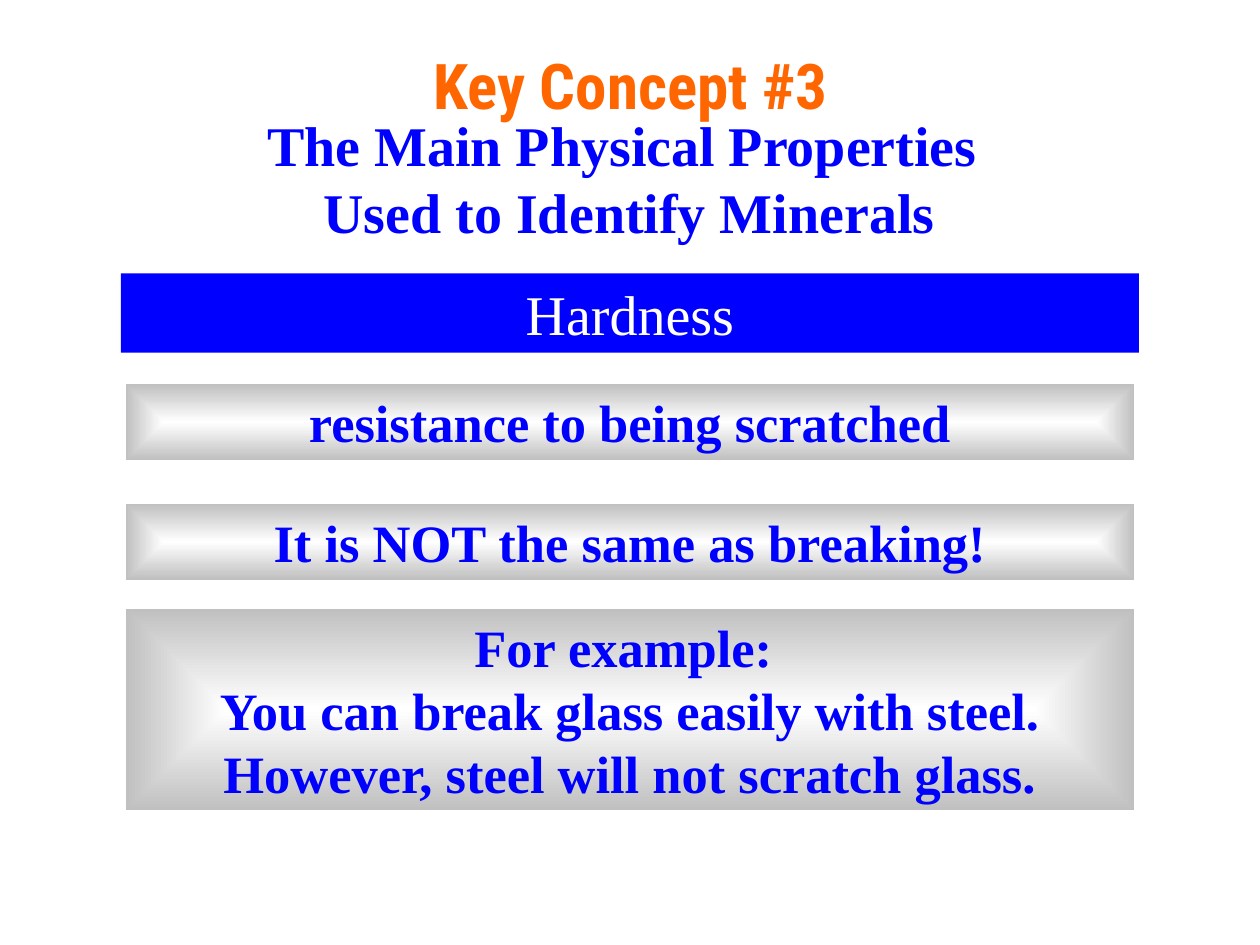
from lxml.etree import SubElement
from pptx import Presentation
from pptx.dml.color import RGBColor
from pptx.enum.shapes import MSO_SHAPE as Shape
from pptx.enum.text import MSO_ANCHOR as Anchor, PP_ALIGN as Align
from pptx.oxml.ns import qn
from pptx.util import Inches, Pt

COLORS = {
    "title": "FF6600",
    "blue": "0000FF",
    "white": "FFFFFF",
    "silver": "C0C0C0",
}
SERIF = "Times New Roman"
PANEL_LEFT, PANEL_WIDTH = 1, 8
PANELS = [
    (3.05, 0.6, ["resistance to being scratched"]),
    (4, 0.6, ["It is NOT the same as breaking!"]),
    (4.83, 1.6, [
        "For example: ",
        "You can break glass easily with steel.",
        "However, steel will not scratch glass.",
    ]),
]


def rgb(name):
    return RGBColor.from_string(COLORS[name])


def write_lines(shape, lines, size, color, bold=True, font=SERIF,
                anchor=Anchor.TOP, wrap=True):
    """Fill the shape with one centred paragraph per line."""
    frame = shape.text_frame
    frame.word_wrap = wrap
    frame.vertical_anchor = anchor
    frame.text = "\n".join(lines)
    for paragraph in frame.paragraphs:
        paragraph.alignment = Align.CENTER
        paragraph.font.name = font
        paragraph.font.size = Pt(size)
        paragraph.font.bold = bold
        paragraph.font.color.rgb = rgb(color)


def add_text(slide, left, top, width, height, lines, size, color, **style):
    box = slide.shapes.add_textbox(
        Inches(left), Inches(top), Inches(width), Inches(height))
    write_lines(box, lines, size, color, **style)


def add_rectangle(slide, left, top, width, height):
    shape = slide.shapes.add_shape(
        Shape.RECTANGLE,
        Inches(left), Inches(top), Inches(width), Inches(height))
    shape.shadow.inherit = False
    shape.line.fill.background()
    return shape


def set_center_gradient(shape, inner, outer):
    """Blend from the inner colour at the centre to the outer at the edges."""
    shape.fill.gradient()
    for stop, color, position in zip(
            shape.fill.gradient_stops, (inner, outer), (0, 1)):
        stop.color.rgb = rgb(color)
        stop.position = position
    gradient = shape.element.spPr.find(qn("a:gradFill"))
    gradient.remove(gradient.find(qn("a:lin")))
    shading = SubElement(gradient, qn("a:path"), path="rect")
    SubElement(shading, qn("a:fillToRect"),
               dict.fromkeys("ltrb", "50000"))


def add_heading_bar(slide, text):
    bar = add_rectangle(slide, 0.96, 2.17, 8.08, 0.63)
    bar.fill.solid()
    bar.fill.fore_color.rgb = rgb("blue")
    write_lines(bar, [text], 32, "white", bold=False)


def add_panel(slide, top, height, lines):
    panel = add_rectangle(slide, PANEL_LEFT, top, PANEL_WIDTH, height)
    set_center_gradient(panel, "white", "silver")
    write_lines(panel, lines, 30, "blue")


def main():
    presentation = Presentation()
    presentation.slide_width = Inches(10)
    presentation.slide_height = Inches(7.5)
    slide = presentation.slides.add_slide(presentation.slide_layouts[6])

    add_text(slide, 0.42, 0.42, 9.17, 0.5, ["Key Concept #3"], 36, "title",
             font="Roboto Condensed", anchor=Anchor.MIDDLE)
    add_heading_bar(slide, "Hardness")
    add_text(slide, 2.02, 0.83, 5.95, 1.17,
             ["The Main Physical Properties ", "Used to Identify Minerals"],
             32, "blue", wrap=False)
    for top, height, lines in PANELS:
        add_panel(slide, top, height, lines)

    presentation.save("out.pptx")


if __name__ == "__main__":
    main()
